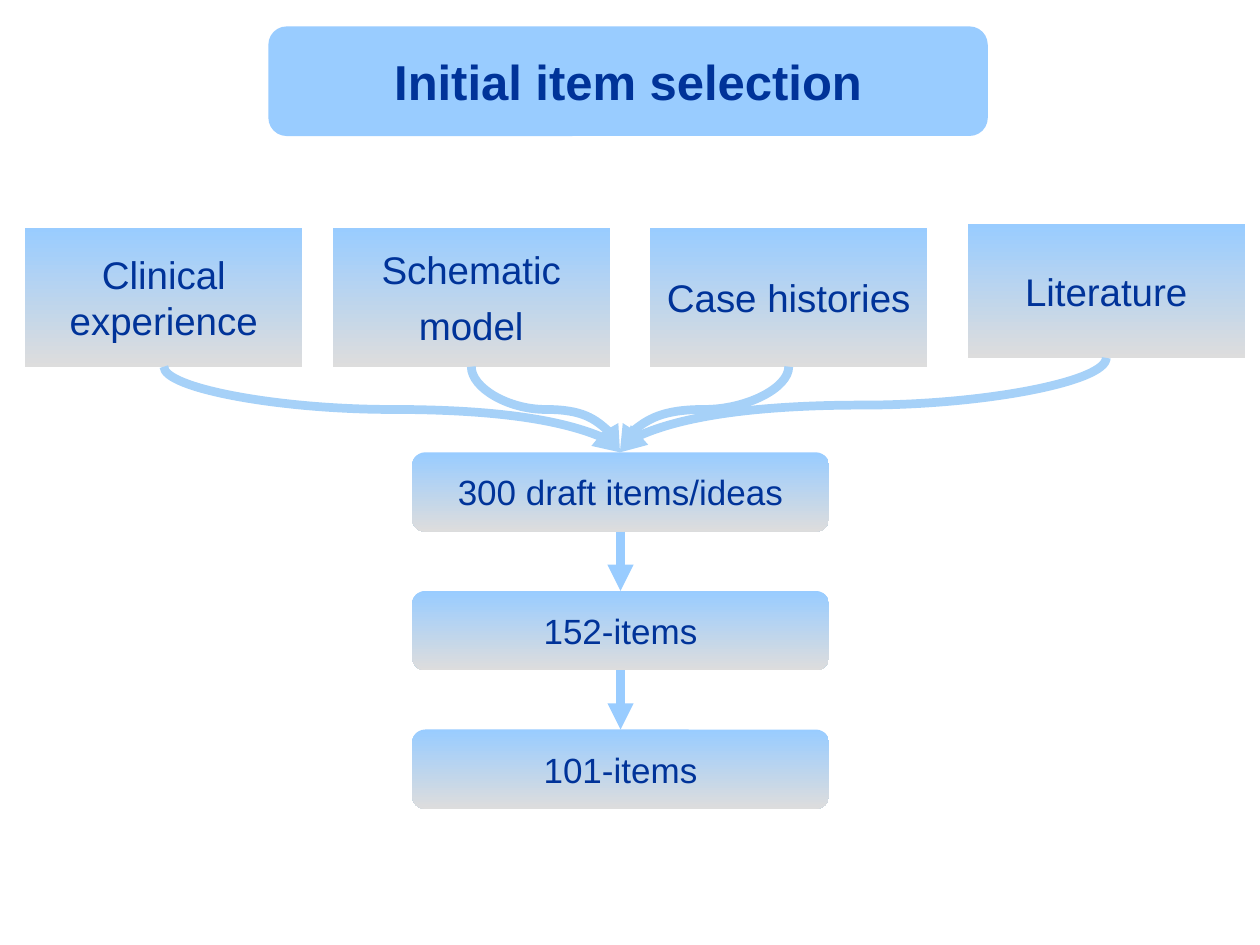
import pptx
import pptx.util
import pptx.dml.color
import pptx.enum.shapes
import pptx.enum.text
import pptx.oxml
import pptx.oxml.ns

Inches = pptx.util.Inches
Pt = pptx.util.Pt
RGBColor = pptx.dml.color.RGBColor
Shape = pptx.enum.shapes.MSO_SHAPE
Link = pptx.enum.shapes.MSO_CONNECTOR

SKY = RGBColor(0x99, 0xCC, 0xFF)
PALE = RGBColor(0xA6, 0xD1, 0xF8)
GREY = RGBColor(0xDD, 0xDD, 0xDD)
NAVY = RGBColor(0x00, 0x33, 0x99)

SOURCES = [
    (0.2, 1.81, 1.1, ["Clinical experience"]),
    (2.64, 1.81, 1.1, ["Schematic", "model"]),
    (5.16, 1.81, 1.1, ["Case histories"]),
    (7.68, 1.78, 1.06, ["Literature"]),
]
STAGES = ["300 draft items/ideas", "152-items", "101-items"]


def write(frame, lines, size, bold=False):
    """Write centred lines into a text frame, one paragraph each."""
    frame.word_wrap = True
    frame.auto_size = pptx.enum.text.MSO_AUTO_SIZE.NONE
    frame.vertical_anchor = pptx.enum.text.MSO_ANCHOR.MIDDLE
    for i, line in enumerate(lines):
        para = frame.add_paragraph() if i else frame.paragraphs[0]
        para.alignment = pptx.enum.text.PP_ALIGN.CENTER
        para.space_before = Pt(size / 4)
        run = para.add_run()
        run.text = line
        run.font.name = "Arial"
        run.font.size = Pt(size)
        run.font.bold = bold
        run.font.color.rgb = NAVY


def add_panel(slide, kind, box):
    """Add a plain shape without line or shadow in the box."""
    panel = slide.shapes.add_shape(kind, *map(Inches, box))
    panel.shadow.inherit = False
    panel.line.fill.background()
    return panel


def add_card(slide, kind, box, lines, size):
    """Add a shape shaded from sky to grey, with its text."""
    card = add_panel(slide, kind, box)
    card.fill.gradient()
    card.fill.gradient_angle = 270
    for stop, tint in zip(card.fill.gradient_stops, (SKY, GREY)):
        stop.color.rgb = tint
    write(card.text_frame, lines, size)


def add_arrow(slide, kind, start, end, tint):
    """Add a thick connector with an arrowhead at its end."""
    arrow = slide.shapes.add_connector(kind, *map(Inches, start + end))
    arrow.line.color.rgb = tint
    arrow.line.width = Pt(5)
    line = arrow.line._get_or_add_ln()
    head = pptx.oxml.ns.qn("a:tailEnd")
    line.append(line.makeelement(head, {"type": "triangle"}))
    props = arrow._element.spPr
    props.append(props.makeelement(pptx.oxml.ns.qn("a:effectLst"), {}))
    return arrow


def add_curve(slide, start, end):
    """Add a curve that leaves start and enters end going down."""
    wide, drop = abs(end[0] - start[0]), end[1] - start[1]
    mid_x, mid_y = (start[0] + end[0]) / 2, (start[1] + end[1]) / 2
    left, right = mid_x - drop / 2, mid_x + drop / 2
    top, base = mid_y - wide / 2, mid_y + wide / 2
    if end[0] > start[0]:
        curve = add_arrow(slide, Link.CURVE, (right, top), (left, base), PALE)
        curve.rotation = 270
    else:
        curve = add_arrow(slide, Link.CURVE, (left, top), (right, base), PALE)
        curve.rotation = 90


def add_title(slide, box, text):
    """Place the title on a rounded panel in the box."""
    panel = add_panel(slide, Shape.ROUNDED_RECTANGLE, box)
    panel.fill.solid()
    panel.fill.fore_color.rgb = SKY
    title = slide.shapes.title
    title.left, title.top, title.width, title.height = map(Inches, box)
    write(title.text_frame, [text], 28, True)
    panel._element.addnext(title._element)


def add_sources(slide, width, goal):
    """Place the row of sources, each with a curve to the goal."""
    for left, top, height, lines in SOURCES:
        box = (left, top, width, height)
        add_card(slide, Shape.FLOWCHART_PROCESS, box, lines, 22)
        add_curve(slide, (left + width / 2, top + height), goal)


def add_stages(slide, box, step):
    """Stack the stages down from the box, joined by arrows."""
    left, top, width, height = box
    mid = left + width / 2
    for i, text in enumerate(STAGES):
        y = top + i * step
        add_card(slide, Shape.FLOWCHART_ALTERNATE_PROCESS,
                 (left, y, width, height), [text], 20)
        if i:
            add_arrow(slide, Link.STRAIGHT,
                      (mid, y - step + height), (mid, y), SKY)


def main():
    """Build the slide and save it."""
    deck = pptx.Presentation()
    deck.slide_width, deck.slide_height = Inches(10), Inches(7.5)
    slide = deck.slides.add_slide(deck.slide_layouts[5])
    add_title(slide, (2.13, 0.21, 5.71, 0.87), "Initial item selection")
    add_stages(slide, (3.27, 3.59, 3.31, 0.63), 1.1)
    add_sources(slide, 2.2, (4.92, 3.59))
    deck.save("out.pptx")


if __name__ == "__main__":
    main()
